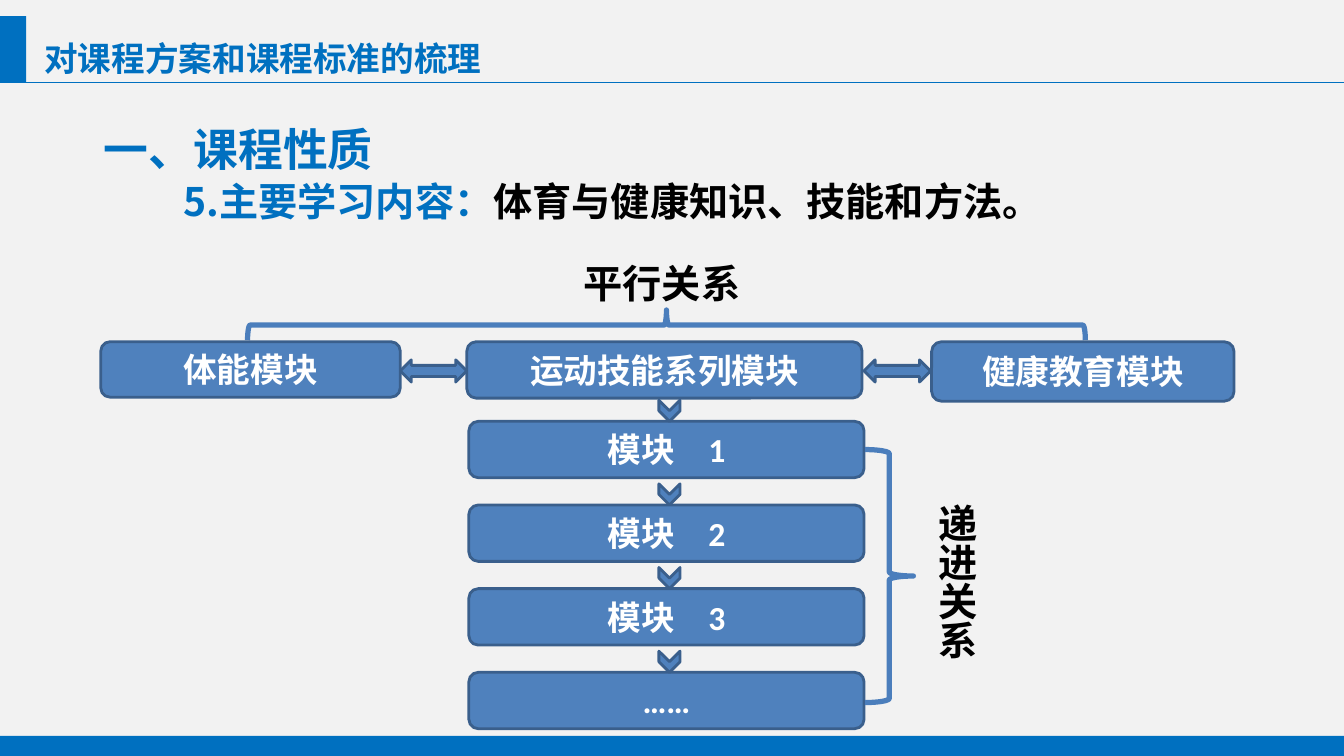
import pptx
import pptx.util
import pptx.dml.color
import pptx.enum.shapes
import pptx.enum.text
import pptx.oxml.ns
import lxml.etree

Inches = pptx.util.Inches
SHAPES = pptx.enum.shapes.MSO_SHAPE
ALIGN = pptx.enum.text.PP_ALIGN
ANCHOR = pptx.enum.text.MSO_ANCHOR
PAGE_WIDTH, PAGE_HEIGHT = 13.33, 7.5
BLUE, BLACK, WHITE = "0070C0", "000000", "FFFFFF"
BOX_FILL, BOX_LINE, BRACE_LINE = "4F81BD", "3A5F8C", "4B7EBC"
HEADING_FONT, BOX_FONT = "Noto Sans CJK SC", "Calibri"


def color(hex_value):
    return pptx.dml.color.RGBColor.from_string(hex_value)


def apply_format(target, values):
    for name, value in values.items():
        setattr(target, name, value)


def place(item, left, top, width, height):
    apply_format(item, {"left": Inches(left), "top": Inches(top),
                        "width": Inches(width), "height": Inches(height)})


def add_child(parent, tag, **attributes):
    return lxml.etree.SubElement(parent, pptx.oxml.ns.qn(tag), attributes)


def add_span(para, text, size, hex_value, font=HEADING_FONT):
    span = para.add_run()
    span.text = text
    apply_format(span.font, {"size": pptx.util.Pt(size), "bold": True, "name": font})
    span.font.color.rgb = color(hex_value)
    if font == HEADING_FONT:
        add_child(span.font._element, "a:ea", typeface=font)


def add_block(page, kind, box, fill=None, line=None, weight=2, rotation=0):
    block = page.shapes.add_shape(kind, *[Inches(value) for value in box])
    block.shadow.inherit = False
    block.rotation = rotation
    if fill:
        block.fill.solid()
        block.fill.fore_color.rgb = color(fill)
    else:
        block.fill.background()
    if line:
        block.line.color.rgb = color(line)
        block.line.width = pptx.util.Pt(weight)
    else:
        block.line.fill.background()
    return block


def add_module(page, text, box):
    module = add_block(page, SHAPES.ROUNDED_RECTANGLE, box, BOX_FILL, BOX_LINE)
    module.text_frame.vertical_anchor = ANCHOR.MIDDLE
    para = module.text_frame.paragraphs[0]
    para.alignment = ALIGN.CENTER
    add_span(para, text, 24, WHITE, BOX_FONT)


def add_label(page, text, box, vertical=False):
    label = page.shapes.add_textbox(*[Inches(value) for value in box])
    label.text_frame.word_wrap = False
    if vertical:
        label.text_frame._txBody.bodyPr.set("vert", "eaVert")
    add_span(label.text_frame.paragraphs[0], text, 28, BLACK)


def add_header(page, left, top, width, height):
    # Accent bar and rule
    add_block(page, SHAPES.RECTANGLE, (left, top, 0.26, height), BLUE)
    bottom = Inches(top + height)
    rule = page.shapes.add_connector(pptx.enum.shapes.MSO_CONNECTOR.STRAIGHT,
                                     Inches(left), bottom, Inches(left + width), bottom)
    rule.line.color.rgb = color(BLUE)
    rule.line.width = pptx.util.Pt(0.75)
    add_child(rule._element.spPr, "a:effectLst")

    # Title
    title = page.shapes.title
    place(title, left + 0.34, top + 0.17, 4.58, 0.5)
    apply_format(title.text_frame, {"word_wrap": False, "vertical_anchor": ANCHOR.MIDDLE,
                                    "auto_size": pptx.enum.text.MSO_AUTO_SIZE.NONE})
    para = title.text_frame.paragraphs[0]
    para.alignment = ALIGN.LEFT
    add_span(para, "对课程方案和课程标准的梳理", 24, BLUE)


def add_body(page, left, top, width, height):
    body = page.placeholders[1]
    place(body, left, top, width, height)
    apply_format(body.text_frame, {"word_wrap": True, "vertical_anchor": ANCHOR.TOP,
                                   "auto_size": pptx.enum.text.MSO_AUTO_SIZE.NONE})
    heading = body.text_frame.paragraphs[0]
    detail = body.text_frame.add_paragraph()
    for para, indent, spacing in ((heading, 0, 1.5), (detail, 0.79, pptx.util.Pt(35))):
        apply_format(para, {"alignment": ALIGN.LEFT, "line_spacing": spacing,
                            "space_before": pptx.util.Pt(0)})
        properties = para._p.get_or_add_pPr()
        properties.set("marL", "0")
        properties.set("indent", str(Inches(indent)))
        add_child(properties, "a:buNone")
    add_span(heading, "一、课程性质", 32, BLUE)
    add_span(detail, "5.主要学习内容：", 28, BLUE)
    add_span(detail, "体育与健康知识、技能和方法。", 28, BLACK)


def add_parallel_row(page, left, top):
    # Label over a brace that opens downwards
    add_label(page, "平行关系", (left + 4.69, top - 0.87, 1.77, 0.57))
    add_block(page, SHAPES.RIGHT_BRACE, (left + 5.46, top - 4.32, 0.3, 8.31),
              line=BRACE_LINE, weight=3.75, rotation=270)

    # Three modules joined by double arrows
    modules = (("体能模块", 0, 2.97, 0.55), ("运动技能系列模块", 3.63, 3.92, 0.56),
               ("健康教育模块", 8.24, 3, 0.59))
    for text, offset, width, height in modules:
        add_module(page, text, (left + offset, top, width, height))
    for offset in (2.97, 7.57):
        add_block(page, SHAPES.LEFT_RIGHT_ARROW, (left + offset, top + 0.18, 0.66, 0.22),
                  BOX_FILL, BOX_LINE)


def add_module_column(page, left, top, width):
    # Steps, each with a chevron above it
    pitch, arrow = 0.83, 0.21
    for index, text in enumerate(("模块　1", "模块　2", "模块　3", "……")):
        step_top = top + index * pitch
        add_module(page, text, (left, step_top, width, 0.56))
        add_block(page, SHAPES.CHEVRON,
                  (left + (width - arrow) / 2 + 0.03, step_top - arrow, arrow, arrow),
                  BOX_FILL, BOX_LINE, rotation=90)

    # Brace and vertical label
    right = left + width
    add_block(page, SHAPES.RIGHT_BRACE, (right + 0.01, top + 0.28, 0.48, 3 * pitch + 0.02),
              line=BRACE_LINE, weight=3.75)
    add_label(page, "递进关系", (right + 0.53, top + 0.72, 0.67, 1.67), vertical=True)


def main():
    deck = pptx.Presentation()
    deck.slide_width, deck.slide_height = Inches(PAGE_WIDTH), Inches(PAGE_HEIGHT)
    page = deck.slides.add_slide(deck.slide_layouts[1])
    page.background.fill.solid()
    page.background.fill.fore_color.rgb = color("F2F2F2")

    add_header(page, 0, 0.16, PAGE_WIDTH, 0.66)
    add_body(page, 0.93, 0.89, 11.1, 2.52)
    add_parallel_row(page, 1, 3.39)
    add_module_column(page, 4.65, 4.18, 3.92)

    # Footer band
    add_block(page, SHAPES.RECTANGLE, (0, 7.3, PAGE_WIDTH, 0.2), BLUE)
    deck.save("out.pptx")


if __name__ == "__main__":
    main()
